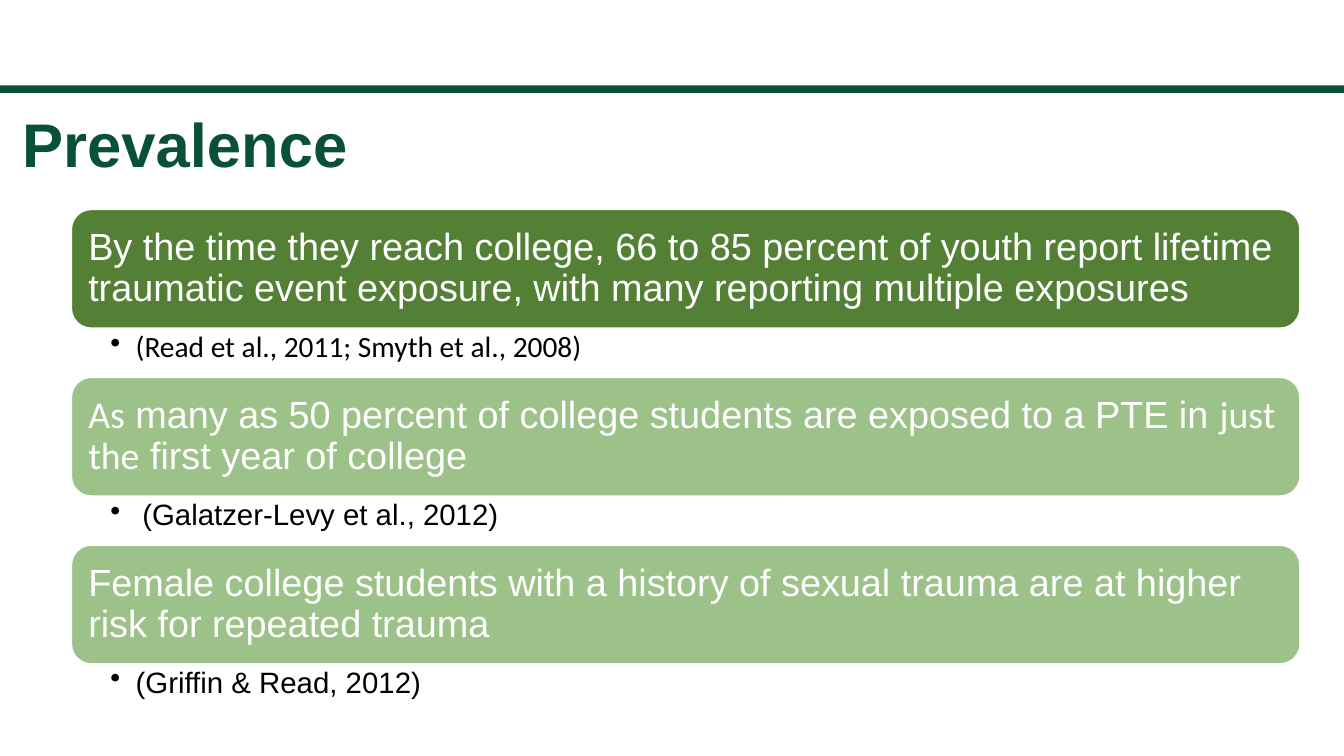
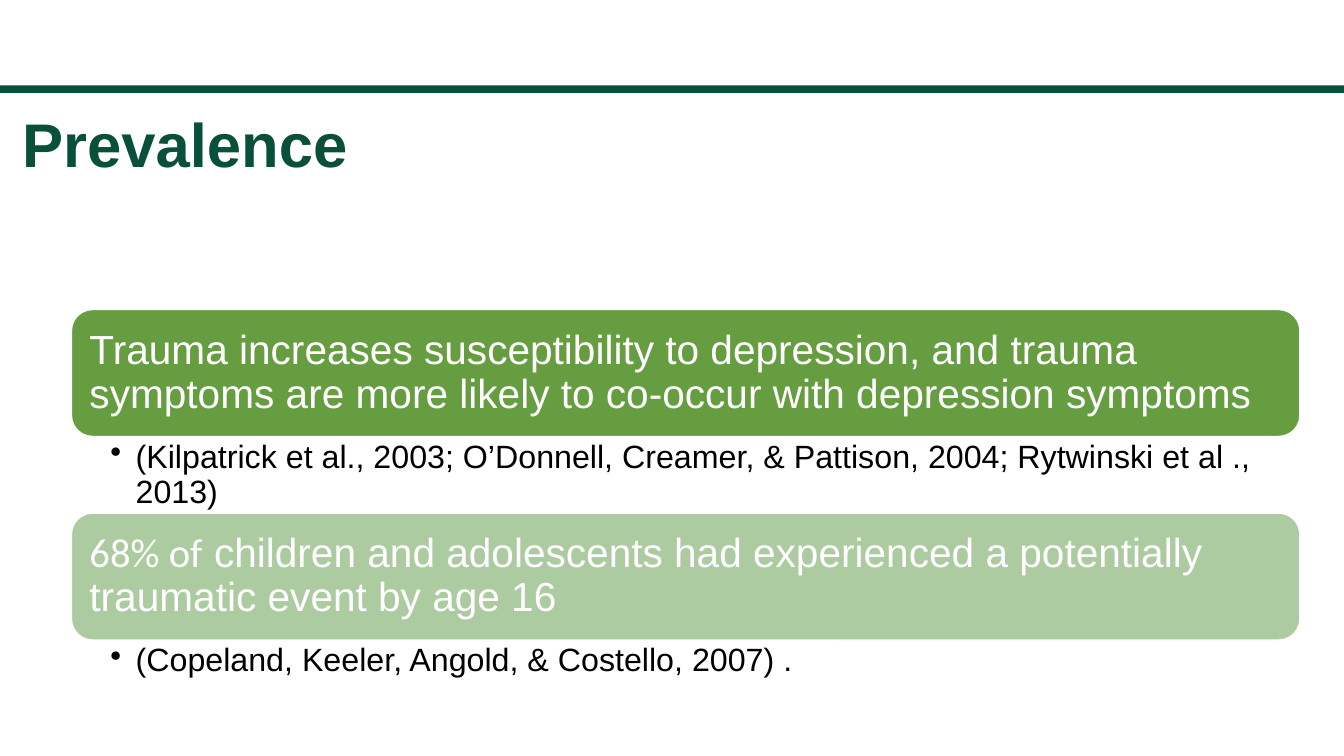
from lxml import etree
from pptx import Presentation
from pptx.dml.color import RGBColor
from pptx.enum.shapes import MSO_SHAPE
from pptx.enum.text import MSO_ANCHOR, MSO_AUTO_SIZE, PP_ALIGN
from pptx.oxml.ns import qn
from pptx.util import Cm, Pt

# Shared look
GREEN, WHITE, BLACK = "09503A", "FFFFFF", "000000"
SANS, ACCENT = "Arial", "Calibri"
SLIDE_W, SLIDE_H = 33.87, 19.05
CARD_LEFT, CARD_W = 1.8, 30.96

# Each finding: card colour, statement runs, citation runs, citation height in cm
EXPOSURE = [
    ("538035",
     [("By the time they reach college, 66 to 85 percent of youth report lifetime "
       "traumatic event exposure, with many reporting multiple exposures", SANS)],
     [("(Read et al., 2011; Smyth et al., 2008)", ACCENT)], 1.24),
    ("9CC189",
     [("As", ACCENT),
      (" many as 50 percent of college students are exposed to a PTE in ", SANS),
      ("just the", ACCENT), (" first year of college", SANS)],
     [(" ", ACCENT), ("(Galatzer-Levy et al., 2012)", SANS)], 1.24),
    ("9CC189",
     [("Female college students with a history of sexual trauma are at "
       "higher risk for repeated trauma", SANS)],
     [("(Griffin & Read, 2012)", SANS)], 1.24),
]
DEPRESSION = [
    ("669D40",
     [("Trauma increases susceptibility to depression, and trauma symptoms "
       "are more likely to co-occur with depression symptoms", SANS)],
     [("(Kilpatrick et al., 2003; O’Donnell, Creamer, & Pattison, 2004; "
       "Rytwinski et al ., 2013)", SANS)], 1.93),
    ("ADCBA0",
     [("68% of", ACCENT),
      (" children and adolescents had experienced a potentially "
       "traumatic event by age 16", SANS)],
     [("(Copeland, Keeler, Angold, & Costello, 2007) .", SANS)], 1.35),
]


def rgb(hex_code):
    return RGBColor.from_string(hex_code)


def set_frame(frame, anchor, left, top, right, bottom):
    frame.word_wrap = True
    frame.auto_size = MSO_AUTO_SIZE.NONE
    frame.vertical_anchor = anchor
    frame.margin_left, frame.margin_right = Cm(left), Cm(right)
    frame.margin_top, frame.margin_bottom = Cm(top), Cm(bottom)


def write(paragraph, runs, size, color, bold=False):
    paragraph.alignment = PP_ALIGN.LEFT
    paragraph.line_spacing = 0.9
    font = paragraph.font
    font.size, font.bold, font.color.rgb = Pt(size), bold, rgb(color)
    font.name = runs[0][1]
    mixed = len({name for _, name in runs}) > 1
    for text, name in runs:
        run = paragraph.add_run()
        run.text = text
        if mixed:
            run.font.name = name


def add_bullet(paragraph):
    properties = paragraph._p.get_or_add_pPr()
    properties.set("marL", str(Cm(0.64)))
    properties.set("indent", str(-Cm(0.64)))
    etree.SubElement(properties, qn("a:buChar")).set("char", "•")


def add_master_band(prs, slide):
    """Draw the band, then move it to the master behind everything else."""
    band = slide.shapes.add_shape(
        MSO_SHAPE.RECTANGLE, Cm(-0.08), Cm(2.15), Cm(SLIDE_W + 0.08), Cm(0.19))
    band.shadow.inherit = False
    band.fill.solid()
    band.fill.fore_color.rgb = rgb(GREEN)
    band.line.fill.background()
    prs.slide_master.shapes.element.insert(2, band.element)


def add_title(slide, text):
    title = slide.shapes.title
    title.left, title.top = Cm(0.46), Cm(2.84)
    title.width, title.height = Cm(30.48), Cm(2.87)
    set_frame(title.text_frame, MSO_ANCHOR.TOP, 0.1, 0.05, 0.1, 0.05)
    write(title.text_frame.paragraphs[0], [(text, SANS)], 44, GREEN, bold=True)


def add_card(slide, top, height, color, statement, size, inset):
    card = slide.shapes.add_shape(
        MSO_SHAPE.ROUNDED_RECTANGLE, Cm(CARD_LEFT), Cm(top), Cm(CARD_W), Cm(height))
    card.shadow.inherit = False
    card.fill.solid()
    card.fill.fore_color.rgb = rgb(color)
    card.line.color.rgb = rgb(WHITE)
    card.line.width = Pt(1)
    set_frame(card.text_frame, MSO_ANCHOR.MIDDLE, inset, inset, inset, inset)
    write(card.text_frame.paragraphs[0], statement, size, WHITE)


def add_citation(slide, top, height, citation, size):
    box = slide.shapes.add_textbox(Cm(CARD_LEFT), Cm(top), Cm(CARD_W), Cm(height))
    set_frame(box.text_frame, MSO_ANCHOR.TOP, 0.98, 0.1, 0.55, 0.1)
    paragraph = box.text_frame.paragraphs[0]
    add_bullet(paragraph)
    write(paragraph, citation, size, BLACK)


def add_findings(slide, findings, top, card_height, size, inset):
    """Stack the cards, each with its citation directly below."""
    for color, statement, citation, citation_height in findings:
        add_card(slide, top, card_height, color, statement, size, inset)
        top += card_height
        add_citation(slide, top, citation_height, citation, size - 6)
        top += citation_height


def main():
    prs = Presentation()
    prs.slide_width, prs.slide_height = Cm(SLIDE_W), Cm(SLIDE_H)
    title_only = prs.slide_layouts[5]

    # College exposure
    exposure = prs.slides.add_slide(title_only)
    add_master_band(prs, exposure)
    add_title(exposure, "Prevalence")
    add_findings(exposure, EXPOSURE, top=5.28, card_height=2.99, size=27, inset=0.28)

    # Depression and childhood events
    depression = prs.slides.add_slide(title_only)
    add_title(depression, "Prevalence")
    add_findings(depression, DEPRESSION, top=7.8, card_height=3.2, size=29, inset=0.3)

    prs.save("out.pptx")


if __name__ == "__main__":
    main()
